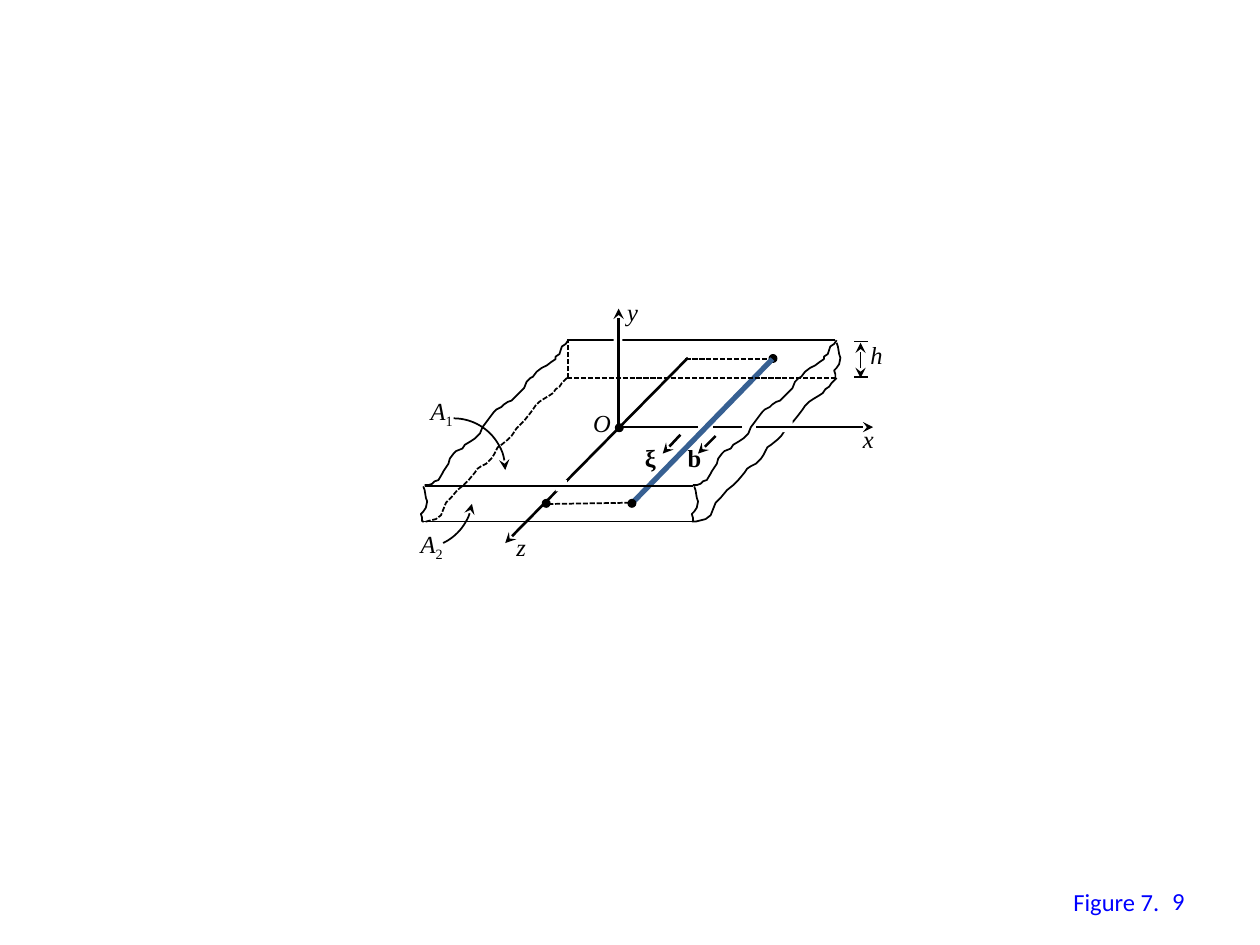
from lxml.etree import SubElement
from pptx import Presentation
from pptx.dml.color import RGBColor
from pptx.enum.dml import MSO_LINE
from pptx.enum.shapes import MSO_CONNECTOR, MSO_SHAPE
from pptx.enum.text import MSO_ANCHOR, MSO_AUTO_SIZE, PP_ALIGN
from pptx.oxml.ns import qn
from pptx.util import Inches, Pt

BLACK = RGBColor(0, 0, 0)
WHITE = RGBColor(255, 255, 255)
STEEL = RGBColor(0x37, 0x60, 0x92)
BLUE = RGBColor(0, 0, 255)
SERIF, SANS = "Times New Roman", "Calibri"
DASHED = {"dash": True}
ARROW = {"width": 1.5, "tail": True}

# Lines: start, end, format
SLAB_LINES = [
    ((5.46, 2.84), (4.01, 4.31), ARROW),  # z axis
    ((5.4, 3.45), (5.26, 3.6), ARROW),  # line direction
    ((5.68, 3.46), (5.54, 3.6), ARROW),  # vector b
    ((6.13, 2.85), (5.01, 4), {"width": 3, "color": STEEL}),  # dislocation line
    ((5.89, 3.39), (5.66, 3.39), {"width": 1.5}),
    ((5.54, 3.39), (4.94, 3.39), {"width": 1.5}),
    ((4.5, 2.7), (6.63, 2.7), {}),
    ((3.35, 4.14), (5.51, 4.14), {}),
    ((4.5, 3), (6.63, 3), DASHED),
    ((4.35, 4), (5.01, 3.99), DASHED),
    ((5.44, 2.85), (6.1, 2.85), DASHED),
    ((4.51, 3), (4.51, 2.7), DASHED),
    ((6.83, 3), (6.83, 2.72), {"head": True, "tail": True}),  # thickness h
    ((6.78, 2.71), (6.89, 2.71), {}),
    ((6.78, 2.99), (6.89, 2.99), {}),
]
FRONT_LINES = [
    ((4.91, 3.38), (4.91, 2.45), ARROW),  # y axis
    ((3.37, 3.86), (5.5, 3.86), {}),
    ((6, 3.39), (6.93, 3.39), ARROW),  # x axis
]

# Broken edges of the slab, drawn once and shifted to the other side
TOP_EDGE = [
    (4.51, 2.7), (4.49, 2.73), (4.46, 2.75), (4.45, 2.78), (4.44, 2.81), (4.41, 2.83),
    (4.41, 2.85), (4.38, 2.87), (4.34, 2.9), (4.3, 2.92), (4.26, 2.95), (4.23, 2.99),
    (4.21, 3), (4.18, 3.03), (4.16, 3.08), (4.12, 3.12), (4.09, 3.15), (4.06, 3.18),
    (4.03, 3.19), (4, 3.21), (3.98, 3.23), (3.94, 3.25), (3.92, 3.27), (3.89, 3.31),
    (3.86, 3.35), (3.83, 3.39), (3.81, 3.44), (3.77, 3.48), (3.74, 3.5), (3.69, 3.53),
    (3.67, 3.56), (3.62, 3.58), (3.6, 3.6), (3.57, 3.64), (3.56, 3.68), (3.54, 3.71),
    (3.52, 3.74), (3.51, 3.76), (3.48, 3.81), (3.45, 3.82), (3.43, 3.84), (3.4, 3.85),
    (3.37, 3.85),
]
BOTTOM_EDGE = [
    (4.5, 3), (4.46, 3.04), (4.44, 3.07), (4.41, 3.09), (4.39, 3.12), (4.36, 3.14),
    (4.31, 3.17), (4.28, 3.19), (4.25, 3.22), (4.23, 3.25), (4.2, 3.29), (4.16, 3.34),
    (4.13, 3.37), (4.1, 3.4), (4.06, 3.46), (4.03, 3.49), (3.98, 3.53), (3.95, 3.55),
    (3.92, 3.61), (3.9, 3.64), (3.86, 3.68), (3.82, 3.7), (3.79, 3.72), (3.77, 3.75),
    (3.72, 3.81), (3.68, 3.85), (3.63, 3.89), (3.58, 3.95), (3.54, 3.99), (3.52, 4.04),
    (3.5, 4.09), (3.46, 4.12), (3.38, 4.14), (3.35, 4.14),
]
CORNER_EDGE = [(3.36, 3.86), (3.37, 3.89), (3.38, 3.95), (3.39, 3.98), (3.38, 4.03),
               (3.36, 4.06), (3.34, 4.08), (3.35, 4.11), (3.35, 4.14)]
EDGES = [  # points, shift right, shift down, format
    (TOP_EDGE, 0, 0, {}), (TOP_EDGE, 2.13, 0, {}),
    (BOTTOM_EDGE, 0, 0, DASHED), (BOTTOM_EDGE, 2.14, 0, {}),
    (CORNER_EDGE, 0, 0, {}), (CORNER_EDGE, 2.15, 0, {}), (CORNER_EDGE, 3.28, -1.14, {}),
]

DOTS = [(4.89, 3.37), (6.11, 2.82), (4.31, 3.97)]
FRONT_DOT = (4.99, 3.97)
GAPS = [(4.87, 2.67, 0.07, 0.06), (4.41, 3.81, 0.09, 0.09), (6.2, 3.34, 0.09, 0.09)]
ARCS = [  # left, top, angle adjustments, flipped
    (3.19, 3.32, (162, 0), False),
    (2.93, 3.53, (177.35, 211.05), True),
]

# Labels: text, subscript, left, top, width, font format
ITALIC, BOLD = {"italic": True}, {"bold": True}
LABELS = [
    ("x", "", 6.75, 3.32, 0.34, ITALIC), ("y", "", 4.88, 2.31, 0.34, ITALIC),
    ("z", "", 4, 4.17, 0.33, ITALIC), ("O", "", 4.61, 3.19, 0.4, ITALIC),
    ("A", "1", 3.32, 3.09, 0.44, ITALIC), ("A", "2", 3.24, 4.15, 0.44, ITALIC),
    ("h", "", 6.81, 2.65, 0.35, ITALIC), ("b", "", 5.36, 3.47, 0.31, BOLD),
    ("ξ", "", 5.02, 3.47, 0.3, BOLD),
]

deck = Presentation()
deck.slide_width, deck.slide_height = Inches(10), Inches(7.5)
page = deck.slides.add_slide(deck.slide_layouts[6])
shapes = page.shapes


def set_line(shape, width=1, color=BLACK, dash=False, head=False, tail=False):
    shape.line.color.rgb = color
    shape.line.width = Pt(width)
    if dash:
        shape.line.dash_style = MSO_LINE.SQUARE_DOT
    for tag, wanted in (("a:headEnd", head), ("a:tailEnd", tail)):
        if wanted:
            SubElement(shape.line._get_or_add_ln(), qn(tag), type="stealth")


def add_lines(lines):
    for start, end, style in lines:
        line = shapes.add_connector(MSO_CONNECTOR.STRAIGHT, *map(Inches, start + end))
        set_line(line, **style)
        SubElement(line._element.spPr, qn("a:effectLst"))


def add_preset(kind, *place, fill=None):
    shape = shapes.add_shape(kind, *map(Inches, place))
    shape.shadow.inherit = False
    if fill is None:
        shape.fill.background()
    else:
        shape.fill.solid()
        shape.fill.fore_color.rgb = fill
    return shape


def add_dot(left, top):
    set_line(add_preset(MSO_SHAPE.OVAL, left, top, 0.05, 0.05, fill=BLACK), width=1.5)


def add_edge(points, right, down, style):
    spots = [(Inches(x + right), Inches(y + down)) for x, y in points]
    builder = shapes.build_freeform(*spots[0])
    builder.add_line_segments(spots[1:], close=False)
    edge = builder.convert_to_shape()
    edge.shadow.inherit = False
    edge.fill.background()
    set_line(edge, **style)


def add_span(para, text, color, **style):
    span = para.add_run()
    span.text = text
    span.font.color.rgb = color
    for name, value in {"size": Pt(14), **style}.items():
        setattr(span.font, name, value)
    return span


def add_box(left, top, width, height, wrap=False):
    box = shapes.add_textbox(*map(Inches, (left, top, width, height)))
    box.text_frame.word_wrap = wrap
    if not wrap:
        box.text_frame.auto_size = MSO_AUTO_SIZE.SHAPE_TO_FIT_TEXT
    return box.text_frame


# Slab, axes and edges
for spot in DOTS:
    add_dot(*spot)
add_lines(SLAB_LINES)
for edge in EDGES:
    add_edge(*edge)

# Curved pointers to the areas
for left, top, angles, flipped in ARCS:
    arc = add_preset(MSO_SHAPE.ARC, left, top, 0.82, 0.82)
    arc.adjustments[0], arc.adjustments[1] = angles
    if flipped:
        arc._element.spPr.xfrm.set("flipV", "1")
    set_line(arc, tail=True)

# Gaps where one line passes behind another, then the front lines
for gap in GAPS:
    add_preset(MSO_SHAPE.RECTANGLE, *gap, fill=WHITE).line.fill.background()
add_lines(FRONT_LINES)
add_dot(*FRONT_DOT)

# Labels
for text, subscript, left, top, width, style in LABELS:
    para = add_box(left, top, width, 0.34).paragraphs[0]
    add_span(para, text, BLACK, name=SERIF, **style)
    if subscript:
        lowered = add_span(para, subscript, BLACK, name=SERIF)
        lowered._r.get_or_add_rPr().set("baseline", "-25000")

# Figure number
add_span(add_box(8.42, 6.99, 0.89, 0.34).paragraphs[0], "Figure 7.", BLUE, name=SANS)
number = add_box(7.17, 6.95, 2.33, 0.4, wrap=True)
number.vertical_anchor = MSO_ANCHOR.MIDDLE
number.paragraphs[0].alignment = PP_ALIGN.RIGHT
add_span(number.paragraphs[0], "9", BLUE, name=SANS)

deck.save("out.pptx")
